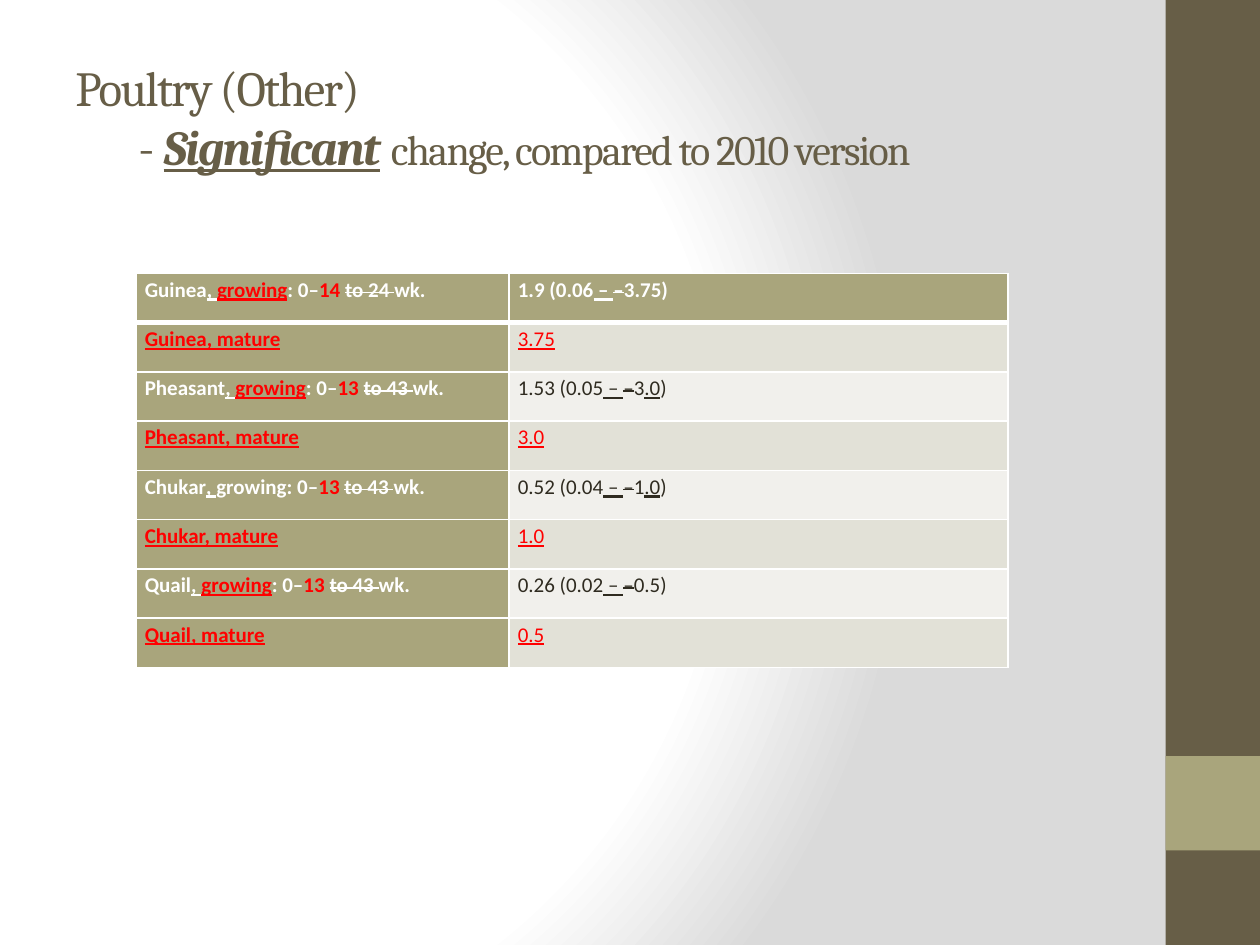
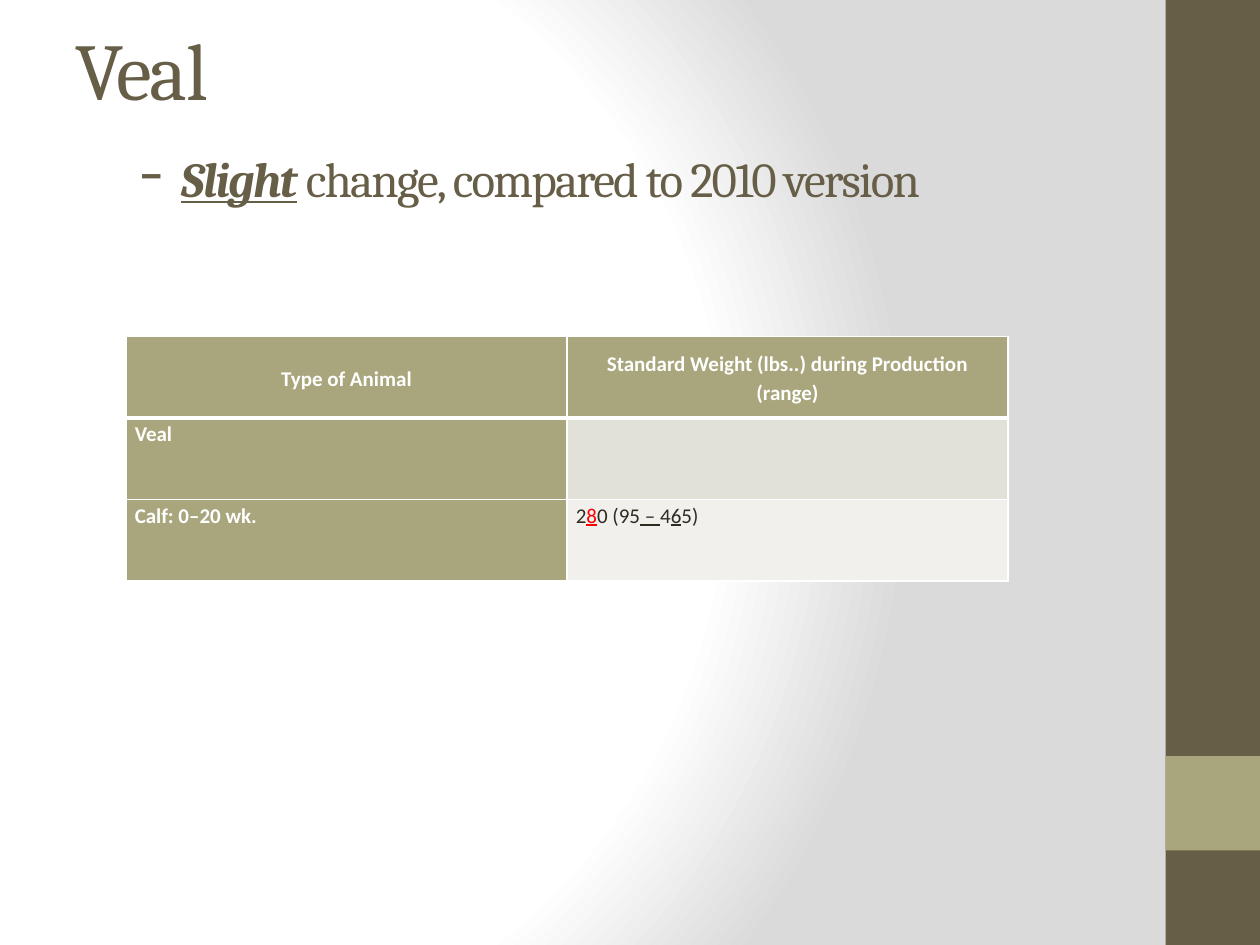
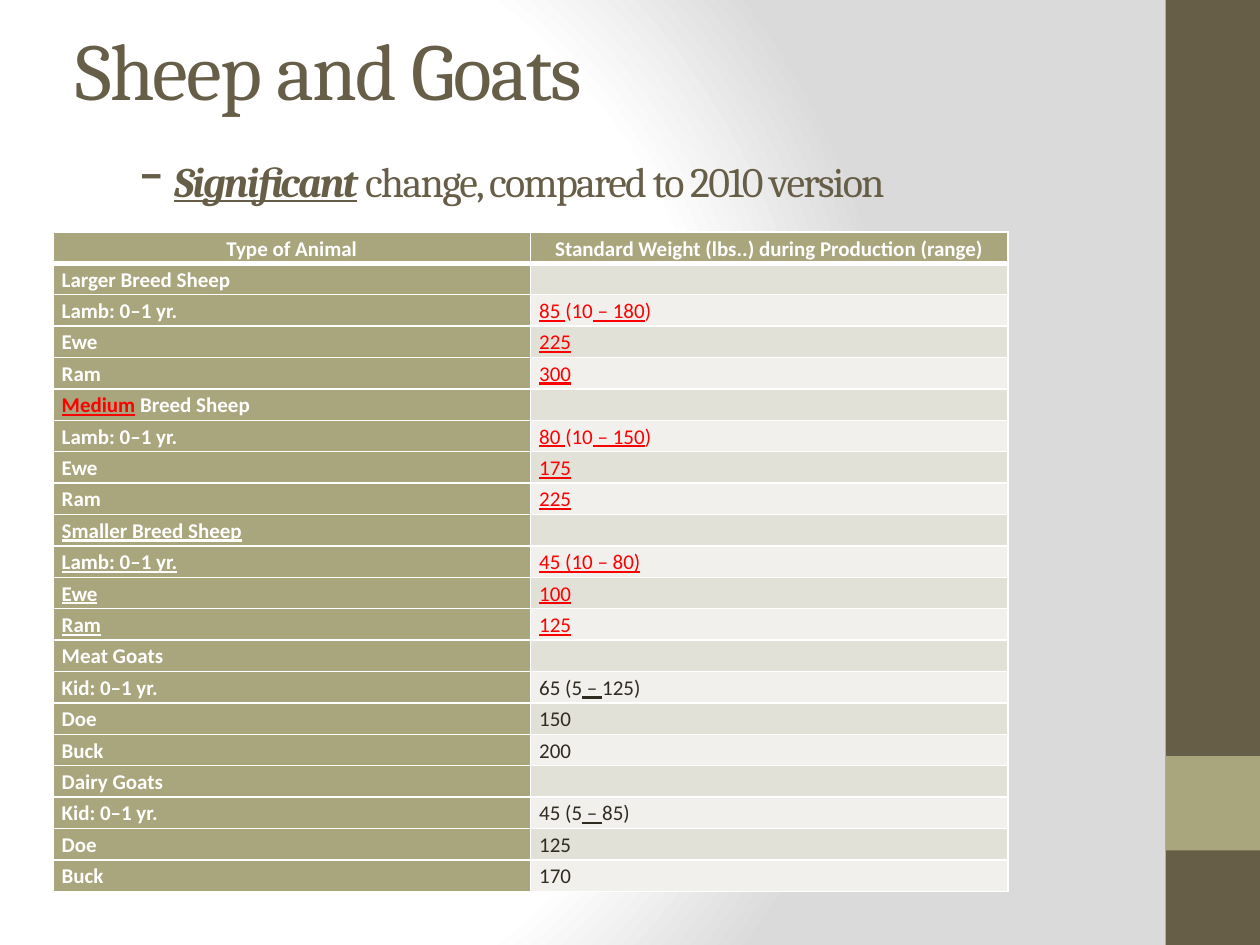
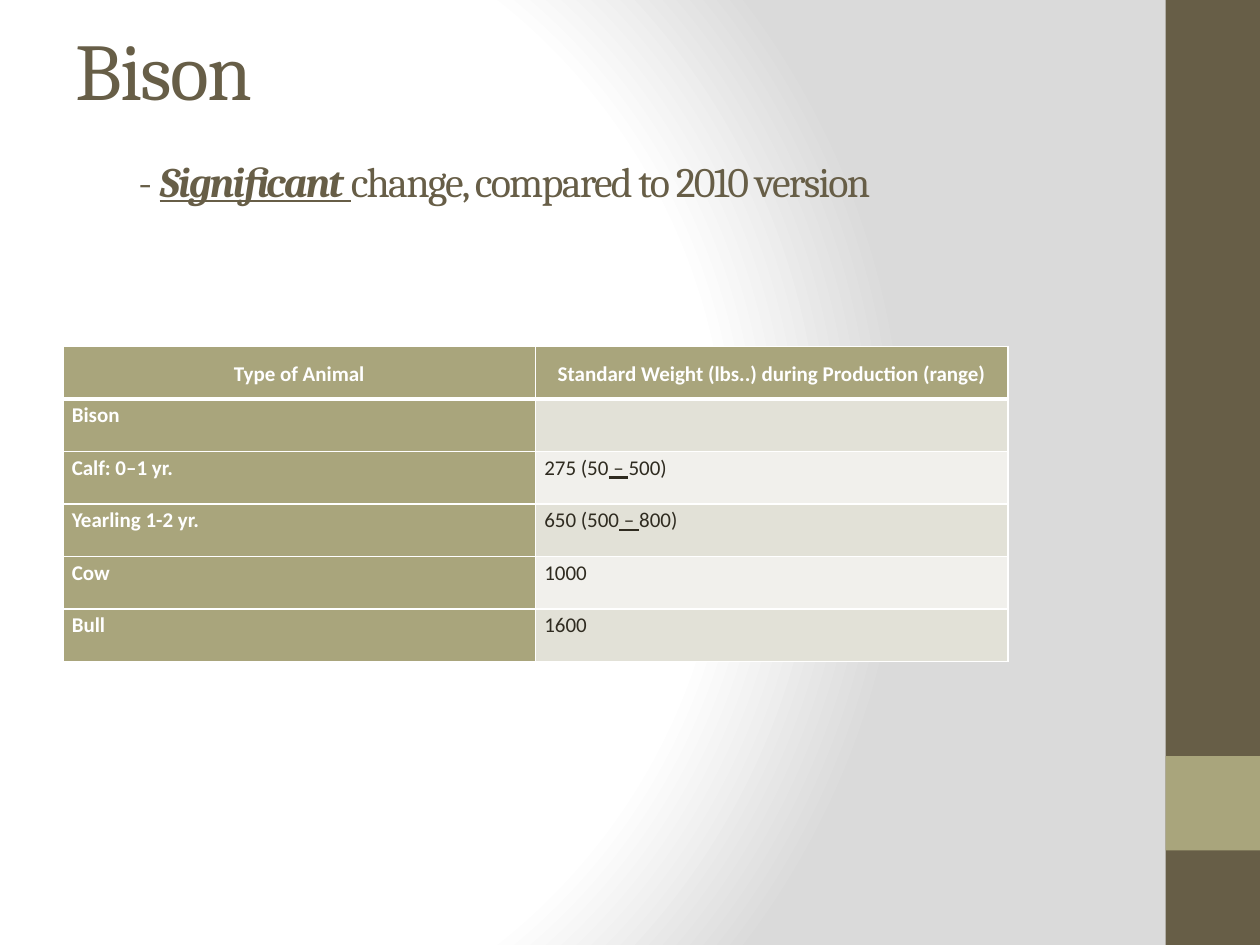
from dataclasses import dataclass

from lxml import etree
from pptx import Presentation
from pptx.dml.color import RGBColor
from pptx.enum import shapes, text
from pptx.oxml import parse_xml
from pptx.oxml.ns import nsdecls, qn
from pptx.util import Inches, Pt

BROWN, OLIVE, WHITE, RED, INK = "675E47", "A9A57C", "FFFFFF", "FF0000", "2F2B20"
BANDS = ("E2E1D7", "F1F0EC")
TITLE_FONT, BODY_FONT = "Cambria", "Calibri"
BODY_SIZE = 12
HEADER = ("Type of Animal", "Standard Weight (lbs..) during Production (range)")
CHANGE = "change, compared to 2010 version"

BACKGROUND = f"""<p:bg {nsdecls("p", "a")}><p:bgPr><a:gradFill rotWithShape="1"><a:gsLst>
<a:gs pos="0"><a:srgbClr val="FFFFFF"/></a:gs><a:gs pos="75000"><a:srgbClr val="FFFFFF"/></a:gs>
<a:gs pos="100000"><a:srgbClr val="DADADA"/></a:gs></a:gsLst>
<a:path path="circle"><a:fillToRect l="20000" t="50000" r="100000" b="50000"/></a:path>
</a:gradFill><a:effectLst/></p:bgPr></p:bg>"""


@dataclass
class Run:
    """Text with marks: b bold, i italic, u underline, s strike, r red."""
    text: str
    marks: str = ""
    size: float = BODY_SIZE


@dataclass
class WeightSlide:
    name: str
    name_size: float
    subtitle: list[Run]
    left: float
    top: float
    height: float
    columns: tuple[float, float]
    rows: list[tuple[str, str]]
    has_header: bool = True


def rgb(color: str) -> RGBColor:
    return RGBColor.from_string(color)


def split_runs(markup: str) -> list[Run]:
    """Read 'plain|marked~marks|plain' as runs."""
    return [Run(*piece.split("~")) for piece in markup.split("|") if piece]


def add_run(paragraph, run: Run, font_name: str, color: str, bold: bool = False):
    added = paragraph.add_run()
    added.text = run.text
    font = added.font
    font.name, font.size = font_name, Pt(run.size)
    font.bold = bold or "b" in run.marks
    font.italic = "i" in run.marks
    font.underline = "u" in run.marks
    font.color.rgb = rgb(RED if "r" in run.marks else color)
    if "s" in run.marks:
        font._element.set("strike", "sngStrike")
    return added


def add_band(slide, top: float, height: float, color: str) -> None:
    band = slide.shapes.add_shape(shapes.MSO_SHAPE.RECTANGLE, Inches(9.25), Inches(top),
                                  Inches(0.75), Inches(height))
    band.shadow.inherit = False
    band.fill.solid()
    band.fill.fore_color.rgb = rgb(color)
    band.line.fill.background()


def add_title(slide, content: WeightSlide) -> None:
    box = slide.shapes.add_textbox(Inches(0.5), Inches(0.3), Inches(8.33), Inches(1.25))
    frame = box.text_frame
    frame.word_wrap = True
    frame.vertical_anchor = text.MSO_ANCHOR.MIDDLE
    paragraph = frame.paragraphs[0]
    for run in [Run(content.name, size=content.name_size), *content.subtitle]:
        added = add_run(paragraph, run, TITLE_FONT, BROWN)
        added.font._element.set("spc", "-100")
        if run.text == content.name:
            paragraph.add_line_break()


def set_borders(cell, top: float, bottom: float) -> None:
    properties = cell._tc.get_or_add_tcPr()
    for index, (side, width) in enumerate({"L": 1, "R": 1, "T": top, "B": bottom}.items()):
        properties.insert(index, parse_xml(
            f'<a:ln{side} {nsdecls("a")} w="{Pt(width)}"><a:solidFill>'
            f'<a:srgbClr val="{WHITE}"/></a:solidFill></a:ln{side}>'))


def fill_cell(cell, markup: str, row: int, column: int, centred: bool) -> None:
    emphasised = row == 0 or column == 0
    cell.margin_left = cell.margin_right = Inches(0.07)
    cell.margin_top = cell.margin_bottom = 0
    cell.fill.solid()
    cell.fill.fore_color.rgb = rgb(OLIVE if emphasised else BANDS[(row - 1) % 2])
    set_borders(cell, 3 if row == 1 else 1, 3 if row == 0 else 1)
    paragraph = cell.text_frame.paragraphs[0]
    paragraph.line_spacing = 1.15
    if centred:
        cell.vertical_anchor = text.MSO_ANCHOR.MIDDLE
        paragraph.alignment = text.PP_ALIGN.CENTER
    for run in split_runs(markup):
        add_run(paragraph, run, BODY_FONT, WHITE if emphasised else INK, emphasised)
    if not markup:  # keeps an empty cell from growing its row
        etree.SubElement(paragraph._p, qn("a:endParaRPr"), sz=str(BODY_SIZE * 100))


def add_weight_table(slide, content: WeightSlide) -> None:
    rows = ([HEADER] if content.has_header else []) + content.rows
    table = slide.shapes.add_table(
        len(rows), 2, Inches(content.left), Inches(content.top),
        Inches(sum(content.columns)), Inches(content.height)).table
    for column, width in zip(table.columns, content.columns):
        column.width = Inches(width)
    for row_index, row in enumerate(rows):
        table.rows[row_index].height = Inches(content.height / len(rows))
        for column_index, markup in enumerate(row):
            fill_cell(table.cell(row_index, column_index), markup, row_index, column_index,
                      content.has_header and row_index == 0)


def add_weight_slide(presentation, content: WeightSlide) -> None:
    slide = presentation.slides.add_slide(presentation.slide_layouts[6])
    slide.element.cSld.insert(0, parse_xml(BACKGROUND))
    add_band(slide, 0, 7.5, BROWN)
    add_band(slide, 6, 0.75, OLIVE)
    add_title(slide, content)
    add_weight_table(slide, content)


SLIDES = [
    WeightSlide(
        "Poultry (Other)", 28,
        [Run("\t- ", size=28), Run("Significant", "biu", 28), Run(" ", size=28),
         Run(CHANGE, size=24)],
        1.08, 2.17, 3.13, (2.96, 3.96),
        [("Guinea|, ~u|growing~ru|: 0–|14 ~r|to 24 ~s|wk.", "1.9 (0.06| – ~u|–~s|3.75)"),
         ("Guinea, mature~ru", "3.75~ru"),
         ("Pheasant|, ~u|growing~ru|: 0–|13 ~r|to 43 ~s|wk.",
          "1.53 (0.05| – ~u|–~s|3|.0~u|)"),
         ("Pheasant, mature~ru", "3.0~ru"),
         ("Chukar|, ~u|growing: 0–|13 ~r|to 43 ~s|wk.", "0.52 (0.04| – ~u|–~s|1|.0~u|)"),
         ("Chukar, mature~ru", "1.0~ru"),
         ("Quail|, ~u|growing~ru|: 0–|13 ~r|to 43 ~s|wk.", "0.26 (0.02| – ~u|–~s|0.5)"),
         ("Quail, mature~ru", "0.5~ru")],
        has_header=False),
    WeightSlide(
        "Veal", 46,
        [Run("\t- ", size=46), Run("Slight", "biu", 28), Run(" " + CHANGE, size=28)],
        1, 2.67, 1.94, (3.5, 3.5),
        [("Veal", ""),
         ("Calf: 0–20 wk.", "2|8~ru|0 (95| – ~u|4|6~u|5)")]),
    WeightSlide(
        "Sheep and Goats", 46,
        [Run("\t-", size=46), Run(" ", size=24), Run("Significant", "biu", 24),
         Run(" " + CHANGE, size=24)],
        0.42, 1.84, 5.24, (3.79, 3.79),
        [("Larger Breed Sheep", ""),
         ("Lamb: 0–1 yr.", "85 ~ru|(10~r| – 180~ru|)~r"),
         ("Ewe", "225~ru"),
         ("Ram", "300~ru"),
         ("Medium~ru| Breed Sheep", ""),
         ("Lamb: 0–1 yr.", "80 ~ru|(10~r| – 150~ru|)~r"),
         ("Ewe", "175~ru"),
         ("Ram", "225~ru"),
         ("Smaller Breed Sheep~u", ""),
         ("Lamb: 0–1 yr.~u", "45 (10 – 80)~ru"),
         ("Ewe~u", "100~ru"),
         ("Ram~u", "125~ru"),
         ("Meat Goats", ""),
         ("Kid: 0–1 yr.", "65 (5| – ~u|125)"),
         ("Doe", "150"),
         ("Buck", "200"),
         ("Dairy Goats", ""),
         ("Kid: 0–1 yr.", "45 (5| – ~u|85)"),
         ("Doe", "125"),
         ("Buck", "170")]),
    WeightSlide(
        "Bison", 46,
        [Run("\t", size=46), Run("- ", size=24), Run("Significant ", "biu", 24),
         Run(CHANGE, size=24)],
        0.5, 2.75, 2.5, (3.75, 3.75),
        [("Bison", ""),
         ("Calf: 0–1 yr.", "275 (50| – ~u|500)"),
         ("Yearling 1-2 yr.", "650 (500| – ~u|800)"),
         ("Cow", "1000"),
         ("Bull", "1600")]),
]


def main() -> None:
    presentation = Presentation()
    presentation.slide_width, presentation.slide_height = Inches(10), Inches(7.5)
    for content in SLIDES:
        add_weight_slide(presentation, content)
    presentation.save("out.pptx")


if __name__ == "__main__":
    main()
